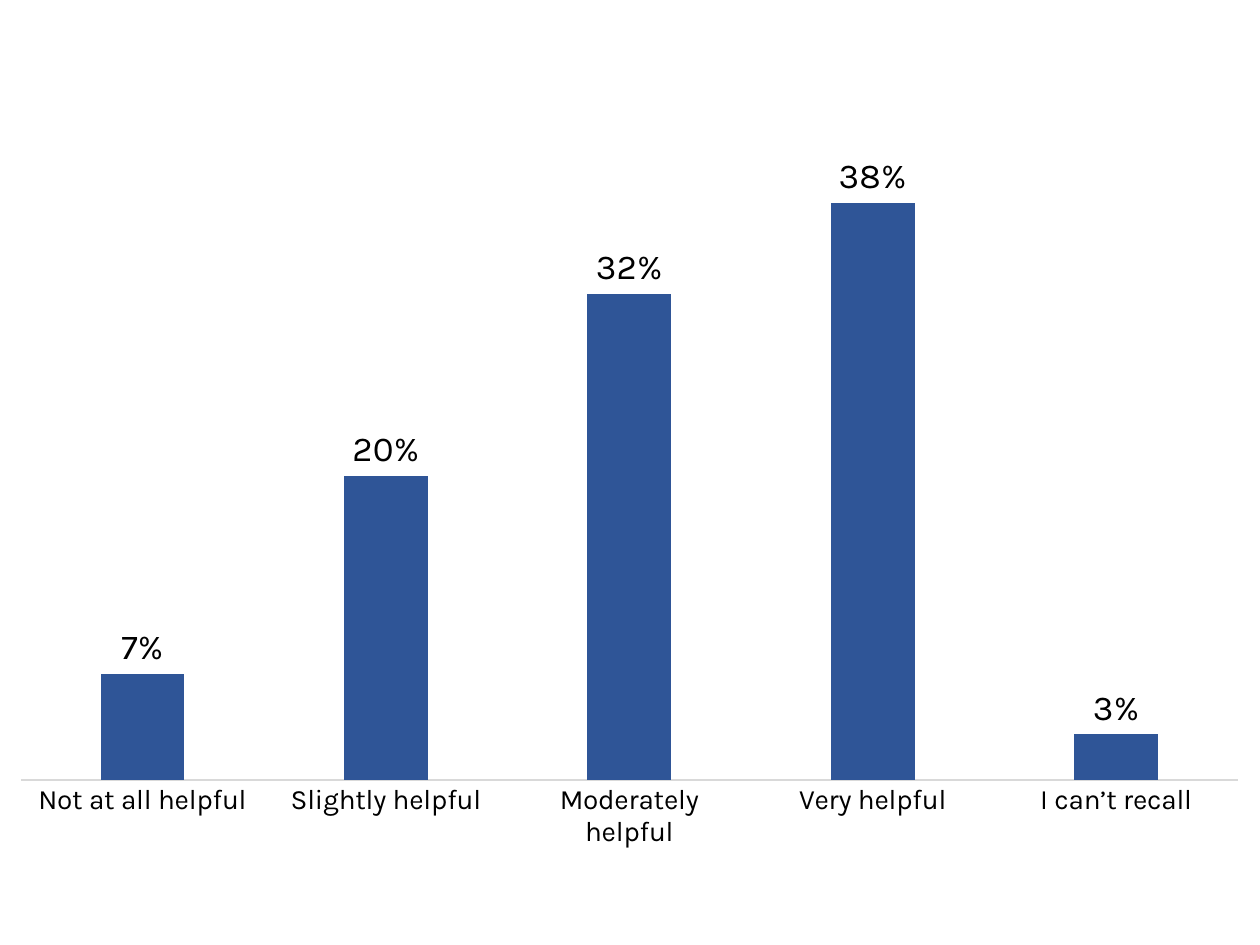
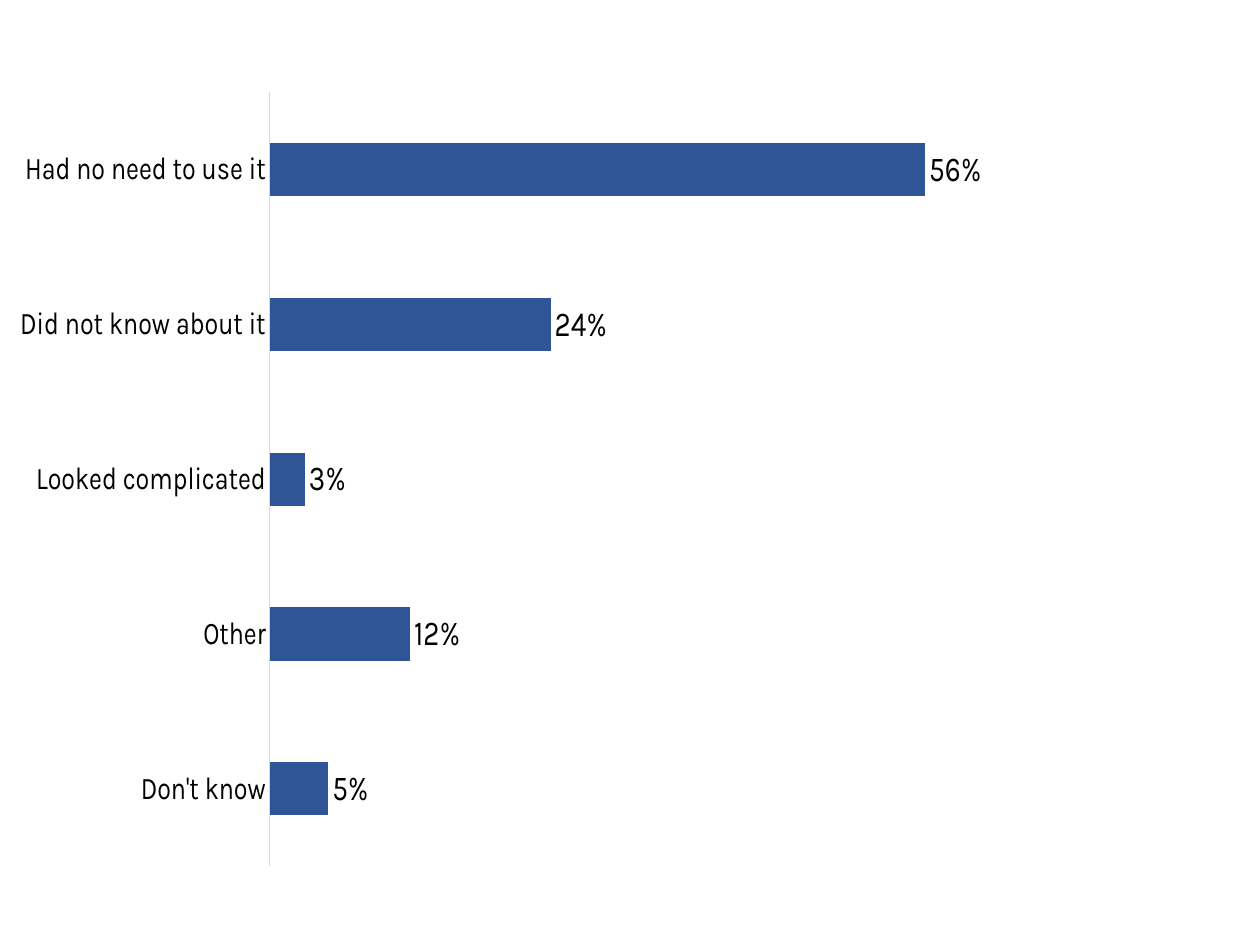
from lxml import etree
from pptx import Presentation
from pptx.chart.data import CategoryChartData
from pptx.dml.color import RGBColor
from pptx.enum.chart import XL_CHART_TYPE, XL_LABEL_POSITION, XL_TICK_LABEL_POSITION, XL_TICK_MARK
from pptx.oxml.ns import qn
from pptx.util import Inches, Pt

FONT = "Karla"
BLACK = RGBColor(0x00, 0x00, 0x00)
BLUE = RGBColor(0x2F, 0x55, 0x97)
LIGHT_GRAY = RGBColor(0xD9, 0xD9, 0xD9)
PERCENT = "0%"

CHARTS = [
    {
        "kind": XL_CHART_TYPE.COLUMN_CLUSTERED,
        "answers": [
            ("Not at all helpful", 0.07),
            ("Slightly helpful", 0.20),
            ("Moderately helpful", 0.32),
            ("Very helpful", 0.38),
            ("I can’t recall", 0.03),
        ],
        "frame": (0.16, 0.76, 9.67, 6.2),
        "plot_area": {"x": 0, "y": 0.098, "w": 1, "h": 0.778},
        "category_size": 16,
        "maximum": 0.4,
        "overlap": -27,
        "reverse": False,
    },
    {
        "kind": XL_CHART_TYPE.BAR_CLUSTERED,
        "answers": [
            ("Had no need to use it", 0.56),
            ("Did not know about it", 0.24),
            ("Looked complicated", 0.03),
            ("Other", 0.12),
            ("Don't know", 0.05),
        ],
        "frame": (0.16, 0, 9.69, 6.96),
        "plot_area": {"x": 0, "y": 0.105, "w": 0.723, "h": 0.883},
        "category_size": 18,
        "maximum": 0.6,
        "overlap": 0,
        "reverse": True,
    },
]


def format_text(text, size, color=BLACK):
    text.font.name = FONT
    text.font.size = Pt(size)
    text.font.color.rgb = color


def place_plot_area(chart, position):
    plot_area = chart.element.find(".//" + qn("c:plotArea"))
    for layout in plot_area.findall(qn("c:layout")):
        plot_area.remove(layout)
    layout = etree.Element(qn("c:layout"))
    manual = etree.SubElement(layout, qn("c:manualLayout"))
    settings = {"layoutTarget": "inner", "xMode": "edge", "yMode": "edge", **position}
    for name, value in settings.items():
        etree.SubElement(manual, qn(f"c:{name}"), val=str(value))
    plot_area.insert(0, layout)


def style_axes(chart, category_size, maximum, reverse):
    categories = chart.category_axis
    categories.major_tick_mark = categories.minor_tick_mark = XL_TICK_MARK.NONE
    categories.tick_label_position = XL_TICK_LABEL_POSITION.NEXT_TO_AXIS
    categories.has_major_gridlines = False
    categories.reverse_order = reverse
    categories.format.line.color.rgb = LIGHT_GRAY
    categories.format.line.width = Pt(0.75)
    format_text(categories.tick_labels, category_size)

    values = chart.value_axis
    values.minimum_scale = 0
    values.maximum_scale = maximum
    values.has_major_gridlines = False
    values.tick_labels.number_format = PERCENT
    values.tick_labels.number_format_is_linked = False
    values.visible = False


def style_bars(chart, overlap):
    plot = chart.plots[0]
    plot.gap_width = 191
    plot.overlap = overlap
    plot.vary_by_categories = False
    fill = plot.series[0].format.fill
    fill.solid()
    fill.fore_color.rgb = BLUE
    labels = plot.series[0].data_labels
    labels.show_value = True
    labels.position = XL_LABEL_POSITION.OUTSIDE_END
    labels.number_format = PERCENT
    labels.number_format_is_linked = False
    format_text(labels, 20)


def add_answer_chart(slide, content):
    data = CategoryChartData(number_format=PERCENT)
    names, shares = zip(*content["answers"])
    data.categories = names
    data.add_series("Series 1", shares)
    frame = [Inches(length) for length in content["frame"]]
    chart = slide.shapes.add_chart(content["kind"], *frame, data).chart
    chart.has_title = False
    chart.has_legend = False
    format_text(chart, 10)
    place_plot_area(chart, content["plot_area"])
    style_axes(chart, content["category_size"], content["maximum"], content["reverse"])
    style_bars(chart, content["overlap"])


def main():
    presentation = Presentation()
    presentation.slide_width = Inches(10)
    presentation.slide_height = Inches(7.5)
    for content in CHARTS:
        slide = presentation.slides.add_slide(presentation.slide_layouts[6])
        add_answer_chart(slide, content)
    presentation.save("out.pptx")


if __name__ == "__main__":
    main()
